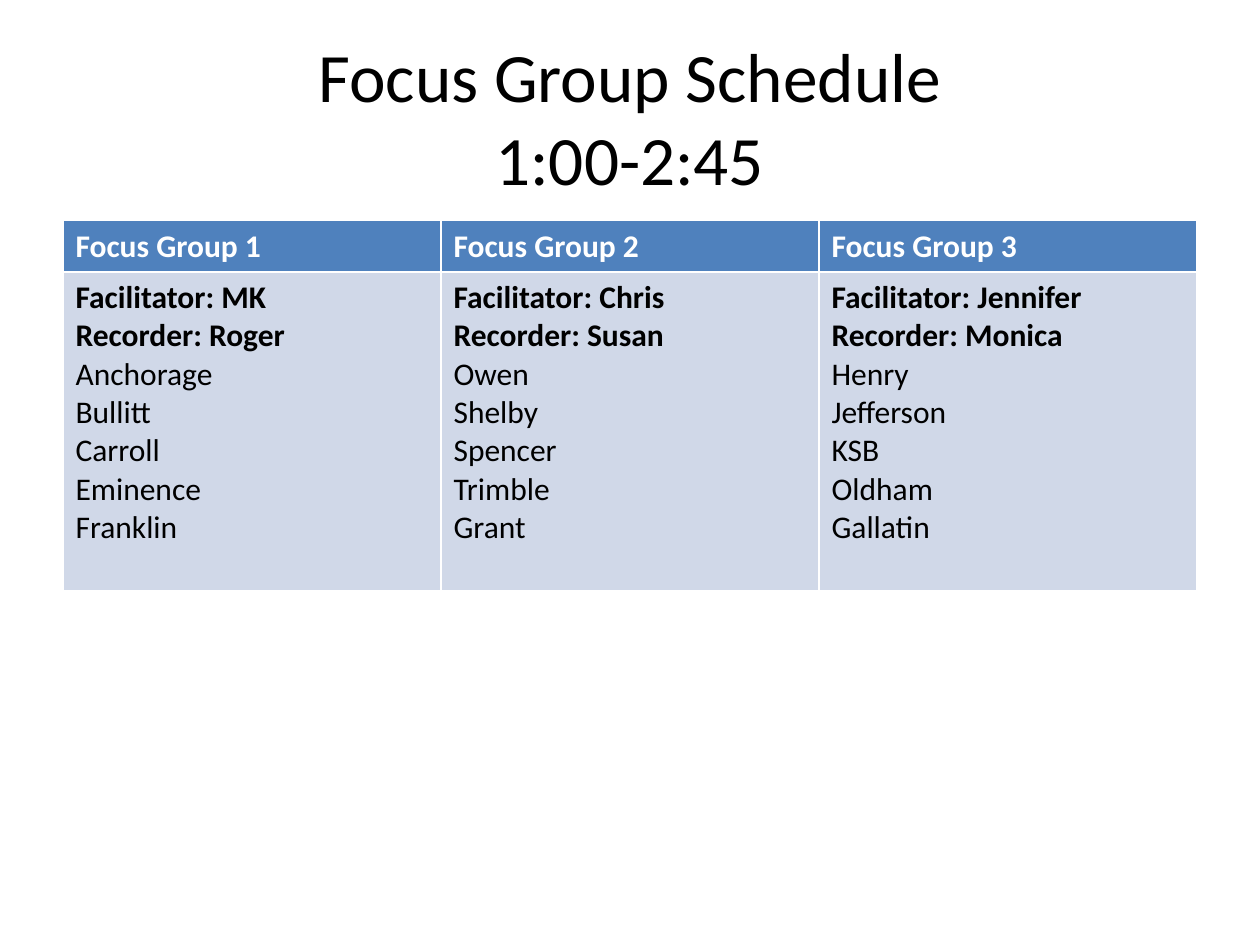
import pptx
import pptx.dml.color
import pptx.enum.text
import pptx.util

Cm = pptx.util.Cm
COLORS = {"black": "000000", "white": "FFFFFF", "header": "4F81BD", "body": "D0D8E8"}
GROUPS = [
    ("Focus Group 1", ["Facilitator: MK", "Recorder: Roger", "Anchorage", "Bullitt",
                       "Carroll", "Eminence", "Franklin"]),
    ("Focus Group 2", ["Facilitator: Chris", "Recorder: Susan", "Owen", "Shelby",
                       "Spencer", "Trimble", "Grant"]),
    ("Focus Group 3", ["Facilitator: Jennifer", "Recorder: Monica", "Henry", "Jefferson",
                       "KSB", "Oldham", "Gallatin"]),
]


def add_run(p, text, size, color, bold=False):
    r = p.add_run()
    r.text = text
    r.font.name = "Calibri"
    r.font.size = pptx.util.Pt(size)
    r.font.bold = bold
    r.font.color.rgb = pptx.dml.color.RGBColor.from_string(COLORS[color])


def fill_cell(cell, fill, lines, color, bold_count):
    cell.fill.solid()
    cell.fill.fore_color.rgb = pptx.dml.color.RGBColor.from_string(COLORS[fill])
    tf = cell.text_frame
    for i, line in enumerate(lines):
        p = tf.paragraphs[0] if i == 0 else tf.add_paragraph()
        add_run(p, line, 18, color, i < bold_count)


prs = pptx.Presentation()
prs.slide_width, prs.slide_height = Cm(25.4), Cm(19.05)
s = prs.slides.add_slide(prs.slide_layouts[6])

# Title
sp = s.shapes.add_textbox(Cm(1.27), Cm(0.76), Cm(22.86), Cm(3.18))
tf = sp.text_frame
tf.word_wrap = True
tf.vertical_anchor = pptx.enum.text.MSO_ANCHOR.MIDDLE
p = tf.paragraphs[0]
p.alignment = pptx.enum.text.PP_ALIGN.CENTER
add_run(p, "Focus Group Schedule", 39.6, "black")
p.add_line_break()
add_run(p, "1:00-2:45", 39.6, "black")

# Schedule table: the default table style supplies the white borders
table = s.shapes.add_table(2, len(GROUPS), Cm(1.27), Cm(4.45), Cm(22.86), Cm(7.46)).table
table.horz_banding = False
table.rows[0].height = Cm(1.03)
table.rows[1].height = Cm(6.43)
for col, (name, members) in enumerate(GROUPS):
    table.columns[col].width = Cm(7.62)
    fill_cell(table.cell(0, col), "header", [name], "white", 1)
    fill_cell(table.cell(1, col), "body", members, "black", 2)

prs.save("out.pptx")
